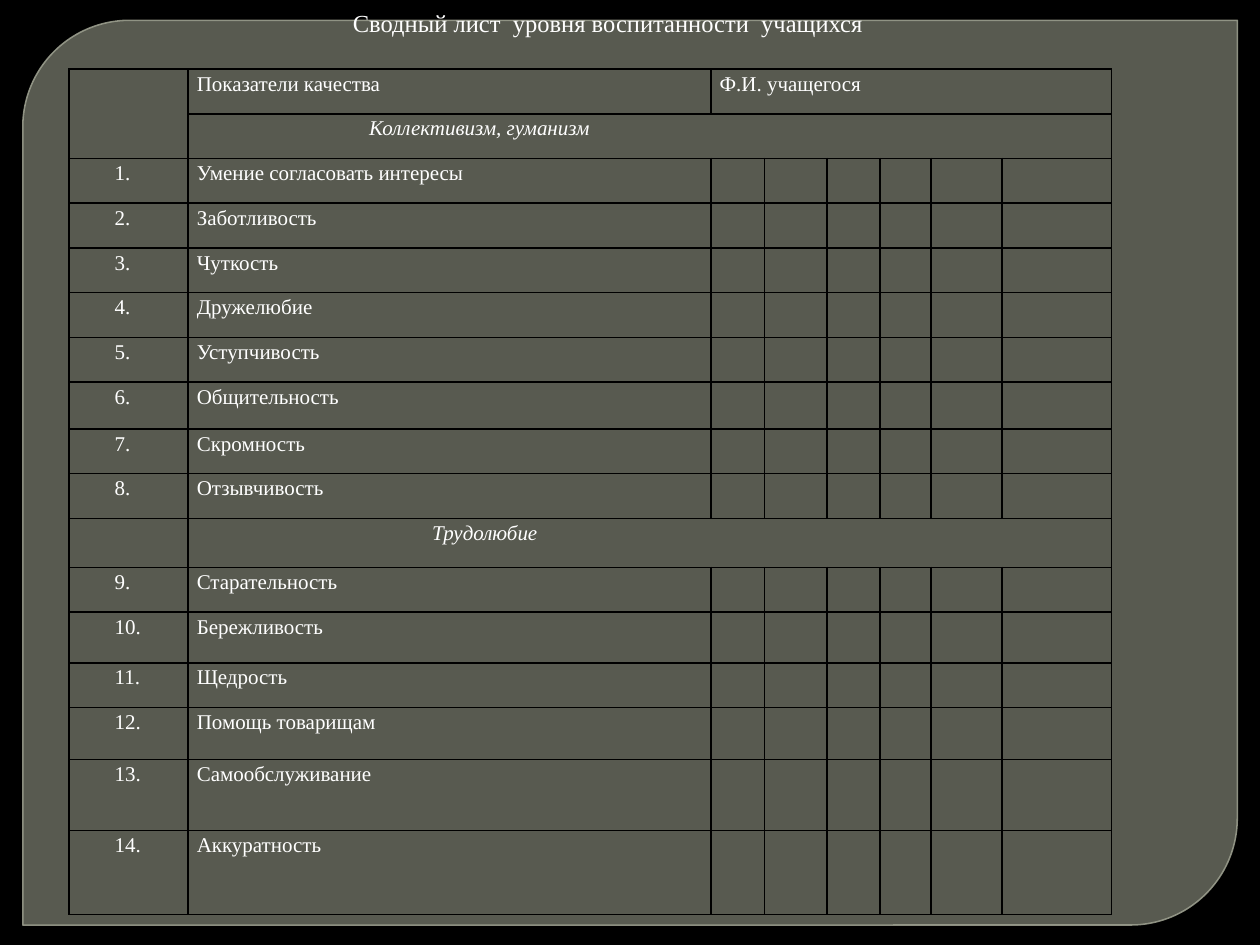
from dataclasses import dataclass
from lxml import etree
from pptx import Presentation
from pptx.dml.color import RGBColor
from pptx.enum.shapes import MSO_SHAPE
from pptx.enum.text import MSO_ANCHOR, PP_ALIGN
from pptx.oxml.ns import qn
from pptx.util import Pt

ROUND_DIAGONAL = MSO_SHAPE.ROUND_2_DIAG_RECTANGLE
TOP = MSO_ANCHOR.TOP
LEFT = PP_ALIGN.LEFT
BORDERS = ("a:lnL", "a:lnR", "a:lnT", "a:lnB")


@dataclass
class Theme:
    font: str = "Times New Roman"
    title_size: float = 14
    text_size: float = 12
    background: str = "000000"
    text: str = "FFFFFF"
    panel: str = "888B7B"
    panel_line: str = "9DA090"
    border: str = "000000"


COLUMNS = [68, 298.8, 30.5, 35.8, 30.5, 29, 40.5, 62.8]
ROW_HEIGHT = 25.55
TALL_ROWS = {7: 26.9, 10: 28, 12: 29, 14: 29.8, 15: 40.6, 16: 48}
# Section name, indent of its heading, qualities assessed
SECTIONS = [
    ("Коллективизм, гуманизм", 98.5,
     ["Умение согласовать интересы", "Заботливость", "Чуткость", "Дружелюбие",
      "Уступчивость", "Общительность", "Скромность", "Отзывчивость"]),
    ("Трудолюбие", 134.5,
     ["Старательность", "Бережливость", "Щедрость", "Помощь товарищам",
      "Самообслуживание", "Аккуратность"]),
]


class SlideBuilder:
    def __init__(self, prs, theme):
        self.theme = theme
        self.s = prs.slides.add_slide(prs.slide_layouts[5])
        fill = self.s.background.fill
        fill.solid()
        fill.fore_color.rgb = RGBColor.from_string(theme.background)

    def style(self, p, size, italic=False, indent=0, first_line=0):
        pPr = p._p.get_or_add_pPr()
        pPr.set("marL", str(Pt(indent)))
        pPr.set("indent", str(Pt(first_line)))
        p.alignment = LEFT
        for r in p.runs:
            r.font.name = self.theme.font
            r.font.size = Pt(size)
            r.font.italic = italic
            r.font.color.rgb = RGBColor.from_string(self.theme.text)

    def panel(self, x, y, w, h):
        sp = self.s.shapes.add_shape(ROUND_DIAGONAL, Pt(x), Pt(y), Pt(w), Pt(h))
        sp.shadow.inherit = False
        sp.adjustments[0] = 0.118
        sp.adjustments[1] = 0
        sp.line.width = Pt(0.87)
        for fill, color, alpha in ((sp.fill, self.theme.panel, 65),
                                   (sp.line.fill, self.theme.panel_line, 88)):
            fill.solid()
            fill.fore_color.rgb = RGBColor.from_string(color)
            clr = fill._xPr.find(qn("a:solidFill"))[0]
            etree.SubElement(clr, qn("a:alpha"), val=str(alpha * 1000))

    def title(self, text, x, y, w, h):
        sp = self.s.shapes.title
        sp.left, sp.top, sp.width, sp.height = Pt(x), Pt(y), Pt(w), Pt(h)
        tf = sp.text_frame
        tf.text = text
        tf.word_wrap = True
        tf.vertical_anchor = TOP
        tf.margin_top = Pt(4.5)
        self.style(tf.paragraphs[0], self.theme.title_size, first_line=14.4)
        # The title sits in front of the panel
        self.s.shapes._spTree.append(sp._element)

    def table(self, x, y, columns, rows):
        table = self.s.shapes.add_table(len(rows), len(columns), Pt(x), Pt(y),
                                        Pt(sum(columns)), Pt(sum(rows))).table
        table.first_row = table.horz_banding = False
        for column, width in zip(table.columns, columns):
            column.width = Pt(width)
        for row, height in zip(table.rows, rows):
            row.height = Pt(height)
        for cell in table.iter_cells():
            cell.margin_left = cell.margin_right = Pt(5)
            cell.margin_top = cell.margin_bottom = 0
            self.border(cell)
            cell.fill.background()
        return table

    def border(self, cell):
        tcPr = cell._tc.get_or_add_tcPr()
        for tag in BORDERS:
            ln = etree.SubElement(tcPr, qn(tag), w=str(Pt(1)))
            fill = etree.SubElement(ln, qn("a:solidFill"))
            etree.SubElement(fill, qn("a:srgbClr"), val=self.theme.border)

    def cell_text(self, cell, text, italic=False, indent=0):
        cell.text_frame.text = text
        p = cell.text_frame.paragraphs[0]
        p.line_spacing = 1.15
        p.space_after = Pt(10)
        self.style(p, self.theme.text_size, italic, indent)


def fill_summary(builder, table):
    last = len(COLUMNS) - 1
    table.cell(0, 0).merge(table.cell(1, 0))
    table.cell(0, 2).merge(table.cell(0, last))
    builder.cell_text(table.cell(0, 1), "Показатели качества")
    builder.cell_text(table.cell(0, 2), "Ф.И. учащегося")
    row, number = 1, 1
    for name, indent, qualities in SECTIONS:
        table.cell(row, 1).merge(table.cell(row, last))
        builder.cell_text(table.cell(row, 1), name, italic=True, indent=indent)
        row += 1
        for quality in qualities:
            builder.cell_text(table.cell(row, 0), f"{number}.", indent=21)
            builder.cell_text(table.cell(row, 1), quality)
            row += 1
            number += 1


def main():
    prs = Presentation()
    prs.slide_width, prs.slide_height = Pt(720), Pt(540)
    builder = SlideBuilder(prs, Theme())
    builder.panel(13, 11.6, 694, 517)
    row_count = 1 + sum(1 + len(qualities) for _, _, qualities in SECTIONS)
    rows = [TALL_ROWS.get(i, ROW_HEIGHT) for i in range(row_count)]
    fill_summary(builder, builder.table(39.5, 39.5, COLUMNS, rows))
    builder.title("Сводный лист  уровня воспитанности  учащихся", 180, 0, 371.5, 46)
    prs.save("out.pptx")


if __name__ == "__main__":
    main()
